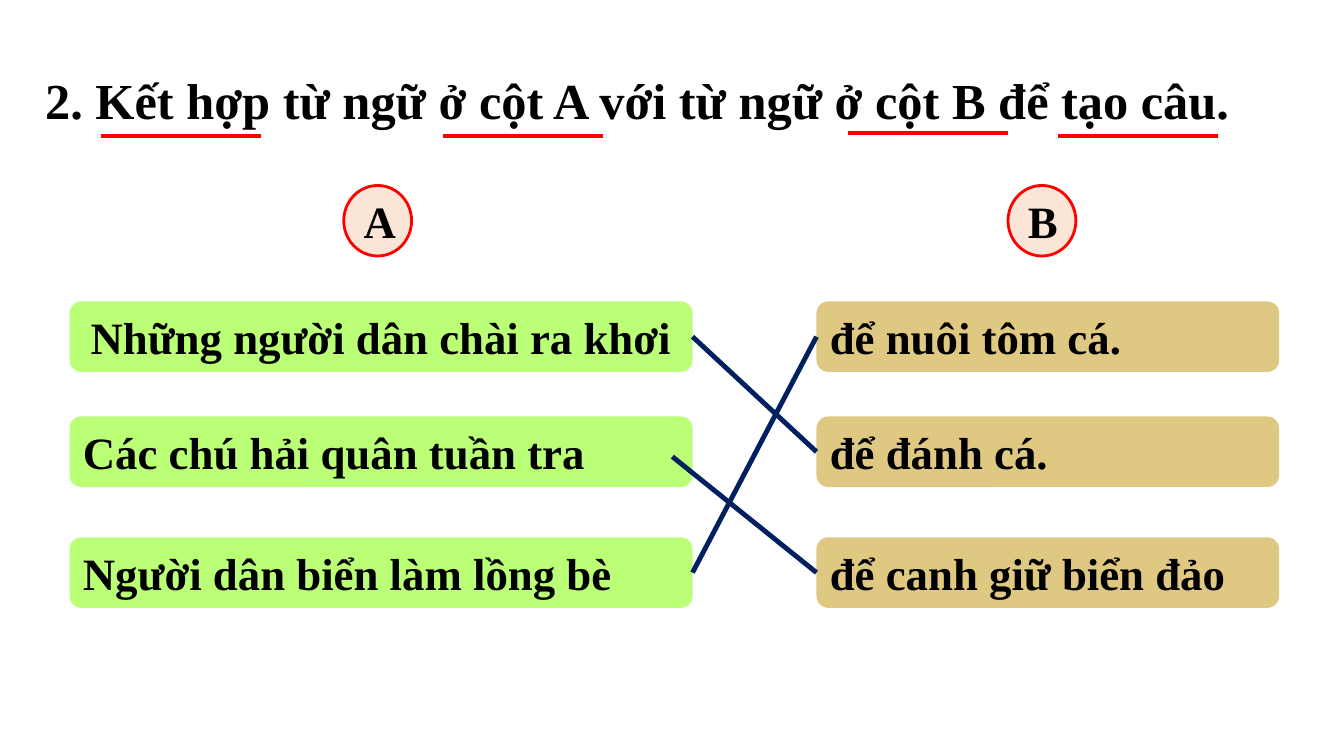
from dataclasses import dataclass

from lxml import etree
from pptx import Presentation
from pptx.dml.color import RGBColor
from pptx.enum.shapes import MSO_CONNECTOR, MSO_SHAPE
from pptx.enum.text import MSO_ANCHOR, MSO_AUTO_SIZE, PP_ALIGN
from pptx.oxml.ns import qn
from pptx.util import Pt

LEFT, CENTER = PP_ALIGN.LEFT, PP_ALIGN.CENTER
TOP, MIDDLE = MSO_ANCHOR.TOP, MSO_ANCHOR.MIDDLE
ROUNDED, OVAL = MSO_SHAPE.ROUNDED_RECTANGLE, MSO_SHAPE.OVAL
STRAIGHT = MSO_CONNECTOR.STRAIGHT
NO_FIT = MSO_AUTO_SIZE.NONE


@dataclass(frozen=True)
class Theme:
    font: str = "Times New Roman"
    title_size: int = 36
    body_size: int = 32
    ink: str = "000000"
    green: str = "99FF33"
    gold: str = "BF9000"
    peach: str = "FBE5D6"
    red: str = "FF0000"
    navy: str = "002060"


theme = Theme()


def write_text(shape, text, size, align, anchor):
    frame = shape.text_frame
    frame.word_wrap = True
    frame.auto_size = NO_FIT
    frame.vertical_anchor = anchor
    para = frame.paragraphs[0]
    para.alignment = align
    span = para.add_run()
    span.text = text
    span.font.name = theme.font
    span.font.size = Pt(size)
    span.font.bold = True
    span.font.color.rgb = RGBColor.from_string(theme.ink)


def draw_line(x1, y1, x2, y2, color, width):
    line = slide.shapes.add_connector(STRAIGHT, Pt(x1), Pt(y1), Pt(x2), Pt(y2))
    line.line.color.rgb = RGBColor.from_string(color)
    line.line.width = Pt(width)
    etree.SubElement(line._element.spPr, qn("a:effectLst"))


deck = Presentation()
deck.slide_width, deck.slide_height = Pt(960), Pt(540)
slide = deck.slides.add_slide(deck.slide_layouts[5])

title = slide.shapes.title
title.left, title.top, title.width, title.height = Pt(16), Pt(46), Pt(944), Pt(51)
write_text(title, "2. Kết hợp từ ngữ ở cột A với từ ngữ ở cột B để tạo câu.",
           theme.title_size, LEFT, TOP)
title.text_frame.margin_left = Pt(16.2)

row_tops = [215.3, 297.5, 383.8]
row_height = 50.4
columns = [
    ("A", 245.5, 49.7, 445, theme.green, 67,
     ["Những người dân chài ra khơi", "Các chú hải quân tuần tra", "Người dân biển làm lồng bè"]),
    ("B", 720, 583.2, 330.5, theme.gold, 49,
     ["để nuôi tôm cá.", "để đánh cá.", "để canh giữ biển đảo"]),
]
for letter, badge_left, left, width, color, opacity, phrases in columns:
    badge = slide.shapes.add_shape(OVAL, Pt(badge_left), Pt(132.5), Pt(48.5), Pt(row_height))
    badge.shadow.inherit = False
    badge.fill.solid()
    badge.fill.fore_color.rgb = RGBColor.from_string(theme.peach)
    badge.line.color.rgb = RGBColor.from_string(theme.red)
    badge.line.width = Pt(2)
    write_text(badge, letter, theme.body_size, CENTER, MIDDLE)

    for row, (top, phrase) in enumerate(zip(row_tops, phrases)):
        box = slide.shapes.add_shape(ROUNDED, Pt(left), Pt(top), Pt(width), Pt(row_height))
        box.shadow.inherit = False
        box.fill.solid()
        box.fill.fore_color.rgb = RGBColor.from_string(color)
        tint = box._element.spPr.find(".//" + qn("a:srgbClr"))
        etree.SubElement(tint, qn("a:alpha"), val=str(opacity * 1000))
        box.line.fill.background()
        align = CENTER if letter == "A" and row == 0 else LEFT
        write_text(box, phrase, theme.body_size, align, MIDDLE)

row_centers = [top + row_height / 2 for top in row_tops]
for start_x, start_y, target in [
    (494.7, row_centers[0], 1),
    (494.7, row_centers[2], 0),
    (480.3, 326.2, 2),
]:
    draw_line(start_x, start_y, 583.2, row_centers[target], theme.navy, 3.5)

for start, y in [(72.5, 97.3), (316.7, 97.3), (605.6, 95.2), (755.5, 97.3)]:
    draw_line(start, y, start + 114.3, y, theme.red, 3)

deck.save("out.pptx")
